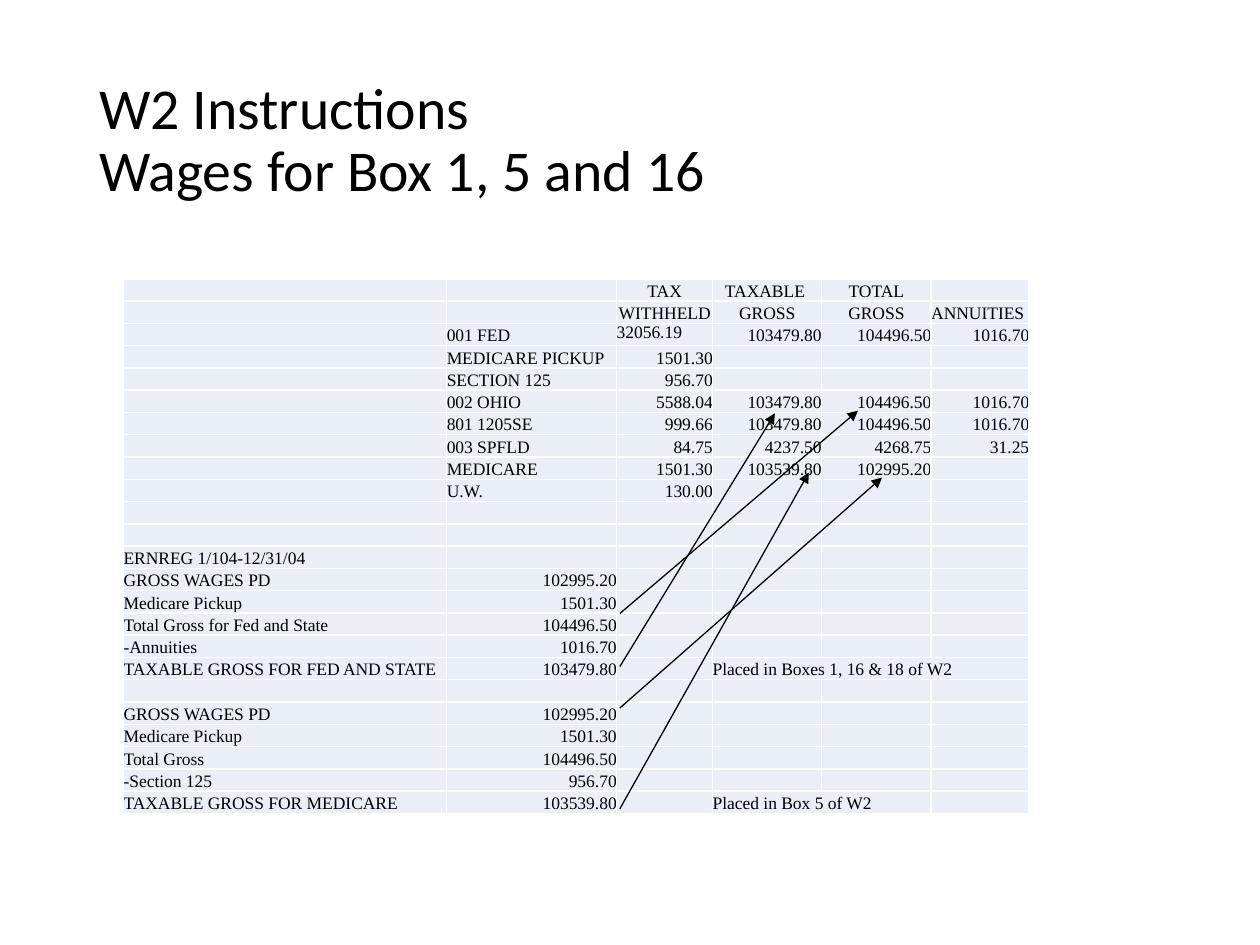
from lxml import etree
from pptx import Presentation
from pptx.dml.color import RGBColor
from pptx.enum.shapes import MSO_CONNECTOR
from pptx.enum.text import MSO_ANCHOR, MSO_AUTO_SIZE, PP_ALIGN
from pptx.oxml.ns import qn
from pptx.util import Pt

BLACK = RGBColor(0x00, 0x00, 0x00)
PALE_BLUE = RGBColor(0xEA, 0xEF, 0xF7)
STRAIGHT = MSO_CONNECTOR.STRAIGHT
TOP, MIDDLE, BOTTOM = MSO_ANCHOR.TOP, MSO_ANCHOR.MIDDLE, MSO_ANCHOR.BOTTOM
LEFT, CENTER, RIGHT = PP_ALIGN.LEFT, PP_ALIGN.CENTER, PP_ALIGN.RIGHT
NO_AUTOFIT = MSO_AUTO_SIZE.NONE

COLUMN_WIDTHS = [184.7, 97.1, 54.9, 62.2, 62.7, 56]
ROW_HEIGHT = 12.75
TABLE_LEFT, TABLE_TOP = 70.6, 159.3
HEADER_ROWS = 2
WAGE_ROWS = [
    ["", "", "TAX", "TAXABLE ", "TOTAL", ""],
    ["", "", "WITHHELD", "GROSS", "GROSS", "ANNUITIES"],
    ["", "001 FED", "32056.19", "103479.80", "104496.50", "1016.70"],
    ["", "MEDICARE PICKUP", "1501.30"],
    ["", "SECTION 125", "956.70"],
    ["", "002 OHIO", "5588.04", "103479.80", "104496.50", "1016.70"],
    ["", "801 1205SE", "999.66", "103479.80", "104496.50", "1016.70"],
    ["", "003 SPFLD", "84.75", "4237.50", "4268.75", "31.25"],
    ["", "MEDICARE", "1501.30", "103539.80", "102995.20"],
    ["", "U.W.", "130.00"],
    [],
    [],
    ["ERNREG 1/104-12/31/04"],
    ["GROSS WAGES PD", "102995.20"],
    ["Medicare Pickup", "1501.30"],
    ["Total Gross for Fed and State", "104496.50"],
    ["-Annuities", "1016.70"],
    ["TAXABLE GROSS FOR FED AND STATE", "103479.80", "",
     "Placed in Boxes 1, 16 & 18 of W2"],
    [],
    ["GROSS WAGES PD", "102995.20"],
    ["Medicare Pickup", "1501.30"],
    ["Total Gross", "104496.50"],
    ["-Section 125", "956.70"],
    ["TAXABLE GROSS FOR MEDICARE", "103539.80", "", "Placed in Box 5 of W2"],
]
# First and last column of each merged note, by row
NOTE_SPANS = {17: (3, 5), 23: (3, 4)}
TOP_LEFT_CELL = (2, 2)

# Start and end of each arrow
ARROWS = [
    ((354.2, 404.6), (504, 272.9)),
    ((354.2, 462.2), (462.2, 270)),
    ((354.2, 350.6), (490.3, 234.7)),
    ((354.2, 380.9), (442.8, 236.2)),
]


def set_attributes(target, values):
    for name, value in values.items():
        setattr(target, name, value)


deck = Presentation()
set_attributes(deck, {"slide_width": Pt(720), "slide_height": Pt(540)})
page = deck.slides.add_slide(deck.slide_layouts[5])

# Title
title = page.shapes.title
set_attributes(title, {"left": Pt(49.5), "top": Pt(28.8),
                       "width": Pt(621), "height": Pt(104.4)})
title.text_frame.text = "W2 Instructions\vWages for Box 1, 5 and 16"
set_attributes(title.text_frame, {"vertical_anchor": MIDDLE, "word_wrap": True,
                                  "auto_size": NO_AUTOFIT})
title_para = title.text_frame.paragraphs[0]
set_attributes(title_para, {"alignment": LEFT, "line_spacing": 0.9})
for span in title_para.runs:
    set_attributes(span.font, {"name": "Calibri", "size": Pt(33)})
    span.font.color.rgb = BLACK

# Wage table
table = page.shapes.add_table(
    len(WAGE_ROWS), len(COLUMN_WIDTHS), Pt(TABLE_LEFT), Pt(TABLE_TOP),
    Pt(sum(COLUMN_WIDTHS)), Pt(ROW_HEIGHT * len(WAGE_ROWS))).table
set_attributes(table, {"first_row": False, "horz_banding": False})
for column, width in zip(table.columns, COLUMN_WIDTHS):
    column.width = Pt(width)
for row in table.rows:
    row.height = Pt(ROW_HEIGHT)

for row_index, row_values in enumerate(WAGE_ROWS):
    for column_index in range(len(COLUMN_WIDTHS)):
        cell = table.cell(row_index, column_index)
        set_attributes(cell, {"margin_left": 0, "margin_right": 0, "margin_top": 0,
                              "margin_bottom": 0, "vertical_anchor": BOTTOM})
        cell.fill.solid()
        cell.fill.fore_color.rgb = PALE_BLUE
        para = cell.text_frame.paragraphs[0]
        text = row_values[column_index] if column_index < len(row_values) else ""
        if not text:
            # Keeps an empty row at its height
            etree.SubElement(para._p, qn("a:endParaRPr"), sz="1000")
            continue
        span = para.add_run()
        span.text = text
        set_attributes(span.font, {"name": "Times New Roman", "size": Pt(10)})
        span.font.color.rgb = BLACK
        if row_index < HEADER_ROWS and text != "ANNUITIES":
            para.alignment = CENTER
        elif text.replace(".", "").isdigit():
            para.alignment = RIGHT
        if (row_index, column_index) == TOP_LEFT_CELL:
            para.alignment = LEFT
            cell.vertical_anchor = TOP

for row_index, (first, last) in NOTE_SPANS.items():
    table.cell(row_index, first).merge(table.cell(row_index, last))

# Arrows from the sums to the wage boxes
for start, end in ARROWS:
    arrow = page.shapes.add_connector(
        STRAIGHT, *[Pt(length) for length in start + end])
    arrow.line.color.rgb = BLACK
    arrow.line.width = Pt(0.75)
    etree.SubElement(arrow.line._get_or_add_ln(), qn("a:tailEnd"), type="triangle")
    etree.SubElement(arrow._element.spPr, qn("a:effectLst"))

deck.save("out.pptx")
